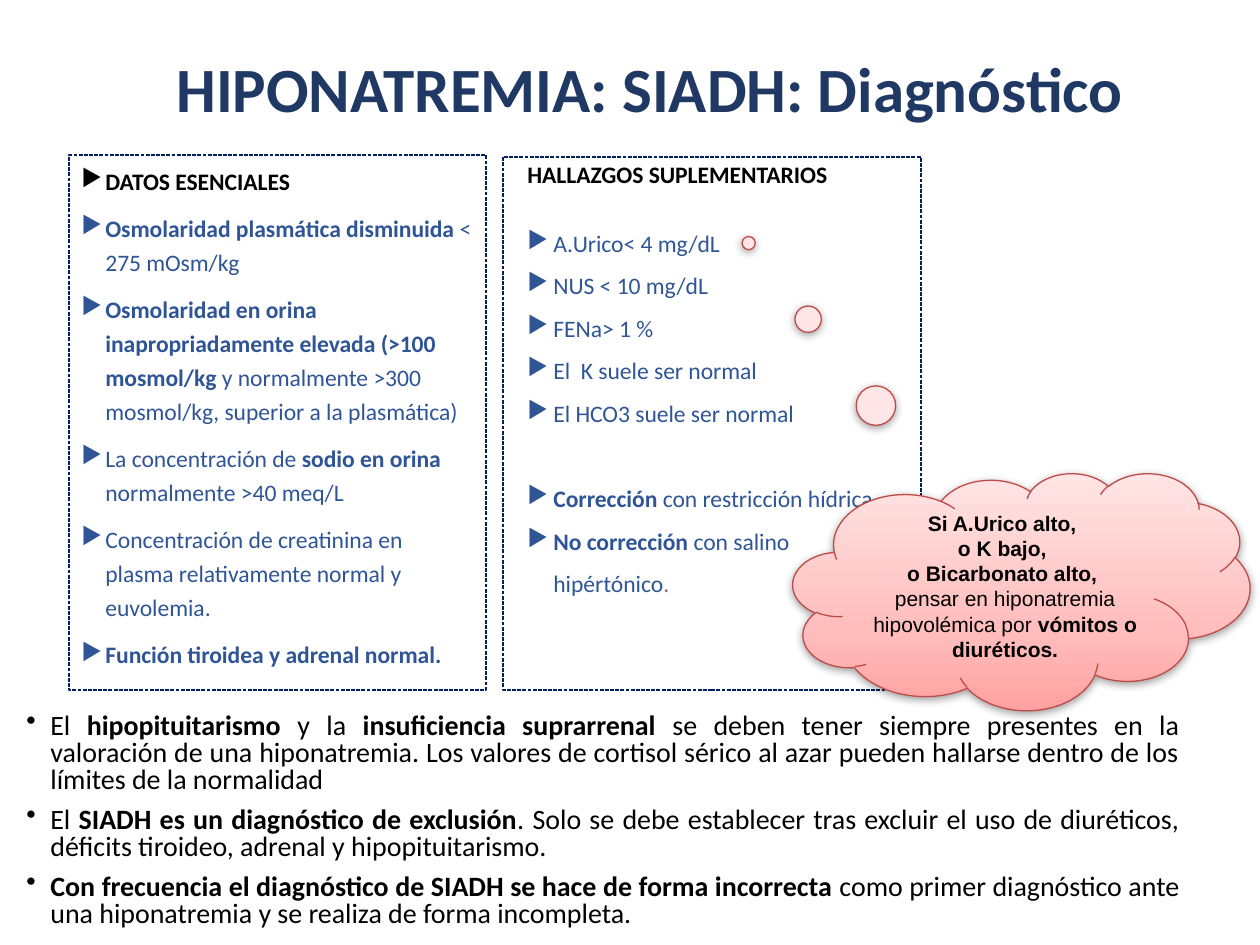
import copy

import pptx
import pptx.dml.color
import pptx.enum.dml
import pptx.enum.shapes
import pptx.enum.text
import pptx.oxml
import pptx.oxml.ns
import pptx.util

PX = 914400 // 126
COLORS = {
    "title": "203864", "frame": "002060", "text": "2F5597", "black": "000000",
    "dot": "8064A2", "edge": "BE4B48",
}
BLUSH = [(0, "FFE5E5"), (0.65, "FFBEBD"), (1, "FFA2A1")]
ALIGN = pptx.enum.text.PP_ALIGN
ANCHOR = pptx.enum.text.MSO_ANCHOR
SHAPE = pptx.enum.shapes.MSO_SHAPE

# Bold wording stands between asterisks
CORE = [
    "*Osmolaridad plasmática disminuida *< 275 mOsm/kg",
    "*Osmolaridad en orina inapropriadamente elevada (>100 mosmol/kg *"
    "y normalmente >300 mosmol/kg, superior a la plasmática)",
    "La concentración de *sodio en orina* normalmente >40 meq/L",
    "Concentración de creatinina en plasma relativamente normal y euvolemia.",
    "*Función tiroidea y adrenal normal.*",
]
LABS = [
    "A.Urico< 4 mg/dL",
    "NUS < 10 mg/dL",
    "FENa> 1 %",
    "El  K suele ser normal",
    "El HCO3 suele ser normal",
]
TESTS = [
    "*Corrección* con restricción hídrica.",
    "*No corrección *con salino hipértónico",
]
CLOUD = [
    "*Si A.Urico alto, *",
    "*o K bajo, *",
    "*o Bicarbonato alto, *",
    "pensar en hiponatremia hipovolémica por* vómitos o diuréticos.*",
]
NOTES = [
    "El *hipopituitarismo* y la *insuficiencia suprarrenal *se deben tener "
    "siempre presentes en la valoración de una hiponatremia. Los valores de "
    "cortisol sérico al azar pueden hallarse dentro de los límites de la "
    "normalidad",
    "El *SIADH es un diagnóstico de exclusión*. Solo se debe establecer tras "
    "excluir el uso de diuréticos, déficits tiroideo, adrenal y "
    "hipopituitarismo.",
    "*Con frecuencia el diagnóstico de SIADH se hace de forma incorrecta *"
    "como primer diagnóstico ante una hiponatremia y se realiza de forma "
    "incompleta.",
]


def rgb(value):
    return pptx.dml.color.RGBColor.from_string(value)


def place(box):
    return [n * PX for n in box]


def add_run(para, text, size, color, bold=False, face="Calibri"):
    run = para.add_run()
    run.text = text
    run.font.size = pptx.util.Pt(size)
    run.font.name = face
    run.font.bold = bold
    run.font.color.rgb = rgb(color)


def add_para(frame, text, size, color, face="Calibri", align=ALIGN.LEFT,
             line=1.0, before=0, left=0, hang=0, bullet=None):
    para = frame.paragraphs[0]
    if para.runs:
        para = frame.add_paragraph()
    para.alignment = align
    para.line_spacing = line
    para.space_before = pptx.util.Pt(before)
    for i, part in enumerate(text.split("*")):
        if part:
            add_run(para, part, size, color, i % 2 == 1, face)
    props = para._p.get_or_add_pPr()
    props.set("marL", str(left * PX))
    props.set("indent", str(-hang * PX))
    if bullet:
        mark = pptx.oxml.parse_xml(
            f'<a:buChar {pptx.oxml.ns.nsdecls("a")} char="{bullet}"/>')
        props.append(mark)
    return para


def add_text(slide, box, anchor=ANCHOR.TOP):
    frame = slide.shapes.add_textbox(*place(box)).text_frame
    frame.word_wrap = True
    frame.vertical_anchor = anchor
    return frame


def add_shape(slide, kind, box, edge, anchor=ANCHOR.TOP):
    shape = slide.shapes.add_shape(kind, *place(box))
    shape.shadow.inherit = False
    shape.line.color.rgb = rgb(edge)
    shape.line.width = pptx.util.Pt(0.75)
    shape.text_frame.word_wrap = True
    shape.text_frame.vertical_anchor = anchor
    return shape


def add_panel(slide, box):
    shape = add_shape(slide, SHAPE.RECTANGLE, box, COLORS["frame"])
    shape.fill.background()
    shape.line.dash_style = pptx.enum.dml.MSO_LINE.SQUARE_DOT
    return shape.text_frame


def add_cloud(slide, box):
    shape = add_shape(slide, SHAPE.CLOUD_CALLOUT, box, COLORS["edge"],
                      ANCHOR.MIDDLE)
    shape.adjustments[0] = -0.597
    shape.adjustments[1] = -1.47
    # Three-stop gradient, top to bottom
    shape.fill.gradient()
    shape.fill.gradient_angle = 270
    stops = shape._element.spPr.find(".//" + pptx.oxml.ns.qn("a:gsLst"))
    stops.append(copy.deepcopy(stops[-1]))
    for stop, (spot, color) in zip(shape.fill.gradient_stops, BLUSH):
        stop.position = spot
        stop.color.rgb = rgb(color)
    # Soft shadow below
    effects = shape._element.spPr.find(pptx.oxml.ns.qn("a:effectLst"))
    effects.append(pptx.oxml.parse_xml(
        f'<a:outerShdw {pptx.oxml.ns.nsdecls("a")} blurRad="63500" '
        'dist="20000" dir="5400000" rotWithShape="0"><a:srgbClr val="000000">'
        '<a:alpha val="38000"/></a:srgbClr></a:outerShdw>'))
    return shape.text_frame


def main():
    deck = pptx.Presentation()
    deck.slide_width = 1260 * PX
    deck.slide_height = 945 * PX
    slide = deck.slides.add_slide(deck.slide_layouts[6])

    # Title
    frame = add_text(slide, (164, 1, 1086, 183), ANCHOR.MIDDLE)
    add_para(frame, "*HIPONATREMIA: SIADH: Diagnóstico*", 36,
             COLORS["title"], line=0.9)

    # Essential data
    frame = add_panel(slide, (69, 155, 417, 535))
    style = dict(line=1.2, before=7.5, left=24, hang=24, bullet="▶")
    add_para(frame, "*DATOS ESENCIALES*", 13.5, COLORS["black"], **style)
    for text in CORE:
        add_para(frame, text, 13.5, COLORS["text"], **style)

    # Supplementary findings
    frame = add_panel(slide, (503, 157, 418, 533))
    add_para(frame, "*HALLAZGOS SUPLEMENTARIOS*", 13.5, COLORS["black"],
             line=0.9, left=38, hang=26)
    for group, gap in ((LABS, 14.8), (TESTS, 24.6)):
        for i, text in enumerate(group):
            para = add_para(frame, text, 13.5, COLORS["text"], line=1.5,
                            before=0 if i else gap, left=38, hang=26,
                            bullet="▶")
    add_run(para, ".", 13.5, COLORS["dot"])

    # Cloud with the alternative diagnosis
    frame = add_cloud(slide, (793, 473, 457, 237))
    for text in CLOUD:
        add_para(frame, text, 12, COLORS["black"], "Arial", ALIGN.CENTER)

    # Closing notes
    frame = add_text(slide, (14, 708, 1178, 370))
    for text in NOTES:
        add_para(frame, text, 16, COLORS["black"], align=ALIGN.JUSTIFY,
                 line=0.8, before=7.5, left=24, hang=24, bullet="•")

    deck.save("out.pptx")


if __name__ == "__main__":
    main()
